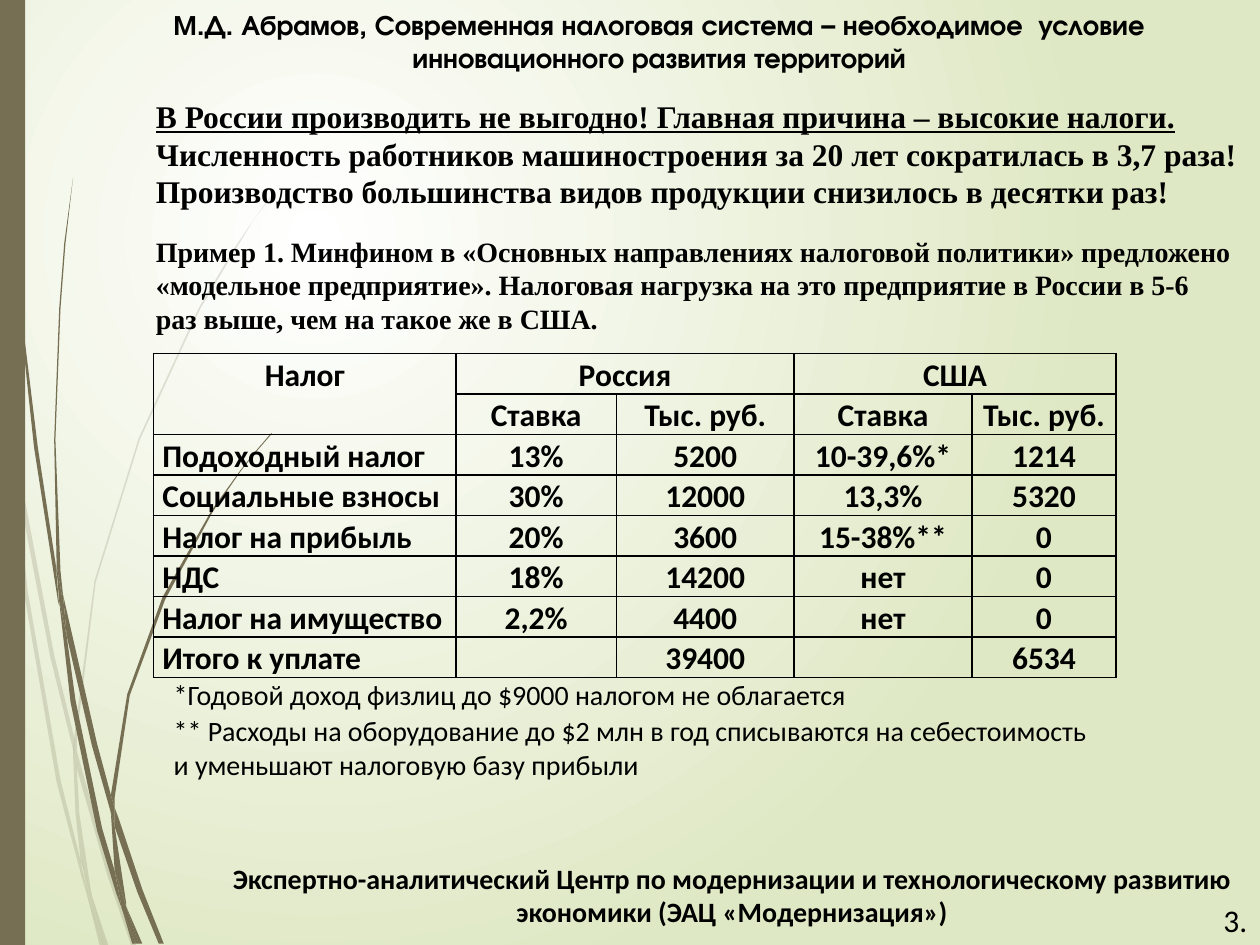
from lxml import etree
from pptx import Presentation
from pptx.dml.color import RGBColor
from pptx.enum.shapes import MSO_SHAPE
from pptx.enum.text import MSO_ANCHOR, PP_ALIGN
from pptx.oxml.ns import qn
from pptx.util import Pt

LEFT, CENTER = PP_ALIGN.LEFT, PP_ALIGN.CENTER
TOP, MIDDLE = MSO_ANCHOR.TOP, MSO_ANCHOR.MIDDLE
RECT = MSO_SHAPE.RECTANGLE

COLORS = {"white": "FFFFFF", "green": "DFE8C4", "stem": "766F54", "black": "000000"}
SERIF, SANS, HEAD = "Times New Roman", "Calibri", "TeX Gyre Adventor"
GRASS_UNIT = Pt(0.72)

# Outlines of the grass blades, in units of GRASS_UNIT
PALE_GRASS = [
    [(8, 350), (6, 322), (0, 282), (0, 299), (7, 344)],
    [(40, 522), (59, 599), (59, 586), (43, 520), (10, 345), (12, 376)],
    [(64, 607), (61, 596), (61, 610), (85, 694), (104, 750), (108, 750), (88, 692)],
    [(83, 750), (86, 750), (73, 711)],
    [(64, 683), (48, 619), (22, 469), (12, 376), (8, 350), (19, 470), (45, 621),
     (64, 693), (70, 714), (69, 707)],
    [(58, 599), (60, 646), (64, 683), (67, 692), (73, 711), (72, 706), (63, 646),
     (61, 610), (61, 608)],
    [(61, 584), (76, 462), (111, 349), (159, 245), (187, 198), (201, 175), (217, 154),
     (217, 153), (201, 175), (186, 197), (158, 244), (110, 348), (75, 461), (59, 584),
     (59, 586), (61, 596)],
    [(70, 714), (79, 750), (82, 750)],
    [(61, 608), (61, 610), (61, 596), (59, 586), (58, 599)],
    [(67, 692), (65, 683), (69, 707), (70, 714), (82, 750), (83, 750), (73, 711)],
]
DARK_GRASS = [
    [(5, 110), (14, 233), (27, 355), (46, 477), (47, 481), (45, 457), (45, 453),
     (30, 355), (15, 232), (6, 109), (4, 48), (3, 0), (2, 0), (3, 48)],
    [(73, 592), (88, 645), (88, 633), (88, 631), (77, 590), (50, 472), (53, 505)],
    [(94, 649), (91, 641), (91, 656), (109, 708), (126, 749), (130, 749), (113, 706)],
    [(91, 691), (81, 657), (60, 556), (53, 505), (47, 477), (56, 557), (77, 659),
     (92, 708), (97, 722), (96, 717)],
    [(50, 472), (48, 453), (44, 349), (48, 245), (52, 193), (58, 141), (51, 193),
     (47, 245), (43, 349), (45, 449), (49, 472)],
    [(110, 749), (113, 749), (100, 719)],
    [(47, 477), (53, 505), (50, 472), (49, 472), (45, 449), (45, 453)],
    [(91, 633), (103, 552), (131, 476), (169, 406), (191, 374), (203, 359), (216, 344),
     (215, 344), (203, 358), (191, 373), (168, 405), (129, 474), (101, 551), (88, 631),
     (91, 641)],
    [(97, 722), (105, 749), (108, 749)],
    [(88, 645), (91, 691), (96, 706), (100, 719), (100, 716), (91, 656), (90, 651)],
    [(88, 645), (90, 651), (91, 656), (91, 641), (88, 631), (88, 633)],
    [(96, 706), (91, 691), (96, 717), (97, 722), (108, 749), (110, 749), (100, 719)],
]

TAXES = [
    ["Налог", "Россия", "", "США", ""],
    ["", "Ставка", "Тыс. руб.", "Ставка", "Тыс. руб."],
    ["Подоходный налог", "13%", "5200", "10-39,6%*", "1214"],
    ["Социальные взносы", "30%", "12000", "13,3%", "5320"],
    ["Налог на прибыль", "20%", "3600", "15-38%**", "0"],
    ["НДС", "18%", "14200", "нет", "0"],
    ["Налог на имущество", "2,2%", "4400", "нет", "0"],
    ["Итого к уплате", "", "39400", "", "6534"],
]
COL_WIDTHS = [172.8, 91.6, 101.6, 101.6, 82.4]
ROW_HEIGHT = 23.14
MERGES = [((0, 0), (1, 0)), ((0, 1), (0, 2)), ((0, 3), (0, 4))]


def rgb(name):
    return RGBColor.from_string(COLORS[name])


def set_background(s):
    fill = s.background.fill
    fill.gradient()
    for stop, name in zip(fill.gradient_stops, ("white", "green")):
        stop.color.rgb = rgb(name)
    grad = s.background._cSld.find(".//" + qn("a:gradFill"))
    grad.remove(grad.find(qn("a:lin")))
    circle = etree.SubElement(grad, qn("a:path"), {"path": "circle"})
    etree.SubElement(circle, qn("a:fillToRect"),
                     dict(l="50000", t="50000", r="100000", b="100000"))


def paint_stem(sp, alpha=None):
    sp.shadow.inherit = False
    sp.fill.solid()
    sp.fill.fore_color.rgb = rgb("stem")
    sp.line.fill.background()
    if alpha:
        color = sp._element.spPr.find(qn("a:solidFill"))[0]
        etree.SubElement(color, qn("a:alpha"), val=str(alpha * 1000))


def add_blade(s, points, alpha=None):
    fb = s.shapes.build_freeform(*points[0], scale=GRASS_UNIT)
    fb.add_line_segments(points[1:], close=True)
    paint_stem(fb.convert_to_shape(), alpha)


def add_run(p, text, size, font, bold=False, underline=False):
    r = p.add_run()
    r.text = text
    r.font.size, r.font.name = Pt(size), font
    r.font.bold, r.font.underline = bold, underline
    r.font.color.rgb = rgb("black")


def add_text(s, box, texts, size, font, bold=False, align=LEFT, anchor=TOP, wrap=True):
    """Adds a text box with one paragraph per text and returns its paragraphs."""
    tf = s.shapes.add_textbox(*map(Pt, box)).text_frame
    tf.word_wrap, tf.vertical_anchor = wrap, anchor
    for i, text in enumerate(texts):
        p = tf.add_paragraph() if i else tf.paragraphs[0]
        p.alignment = align
        add_run(p, text, size, font, bold)
    return tf.paragraphs


def set_borders(cell):
    tcPr = cell._tc.get_or_add_tcPr()
    for side in ("a:lnL", "a:lnR", "a:lnT", "a:lnB"):
        ln = etree.SubElement(tcPr, qn(side), w=str(Pt(1)))
        fill = etree.SubElement(ln, qn("a:solidFill"))
        etree.SubElement(fill, qn("a:srgbClr"), val=COLORS["black"])


def add_tax_table(s, left, top):
    frame = s.shapes.add_table(len(TAXES), len(COL_WIDTHS), Pt(left), Pt(top),
                               Pt(sum(COL_WIDTHS)), Pt(ROW_HEIGHT * len(TAXES)))
    table = frame.table
    table.first_row = table.horz_banding = False
    for col, width in zip(table.columns, COL_WIDTHS):
        col.width = Pt(width)
    for i, texts in enumerate(TAXES):
        table.rows[i].height = Pt(ROW_HEIGHT)
        for j, text in enumerate(texts):
            cell = table.cell(i, j)
            cell.margin_left = cell.margin_right = Pt(5)
            cell.margin_top = cell.margin_bottom = Pt(0)
            set_borders(cell)
            cell.fill.background()
            if text:
                p = cell.text_frame.paragraphs[0]
                p.alignment = LEFT if j == 0 and i > 1 else CENTER
                p.line_spacing = 1.07
                add_run(p, text, 18, SANS, bold=True)
    for first, last in MERGES:
        table.cell(*first).merge(table.cell(*last))


def main():
    prs = Presentation()
    prs.slide_width, prs.slide_height = Pt(720), Pt(540)
    s = prs.slides.add_slide(prs.slide_layouts[6])

    # Background, grass and side bar
    set_background(s)
    for points in PALE_GRASS:
        add_blade(s, points, alpha=20)
    for points in DARK_GRASS:
        add_blade(s, points)
    paint_stem(s.shapes.add_shape(RECT, Pt(0), Pt(0), Pt(14.4), Pt(540)))

    # Example
    example = add_text(s, (82, 130.3, 630.7, 264.2), [
        "Пример 1. Минфином в «Основных направлениях налоговой политики» предложено "
        "«модельное предприятие». Налоговая нагрузка на это предприятие в России "
        "в 5-6 раз выше, чем на такое же в США."], 16, SERIF, bold=True)
    example[0].space_before = Pt(10)

    # Main statement
    statement = add_text(s, (82, 51.8, 647, 72.7), [
        "В России производить не выгодно! Главная причина – высокие налоги.",
        "Производство большинства видов продукции снизилось в десятки раз!"],
        18, SERIF, bold=True)
    statement[0].runs[0].font.underline = True
    statement[0].add_line_break()
    add_run(statement[0], "Численность работников машиностроения за 20 лет "
            "сократилась в 3,7 раза!", 18, SERIF, bold=True)

    # Page number, footer and header
    add_text(s, (692, 511.2, 28, 28.8), ["3."], 18, SANS, wrap=False)
    add_text(s, (110.9, 488.2, 614.9, 46), [
        "Экспертно-аналитический Центр по модернизации и технологическому развитию "
        "экономики (ЭАЦ «Модернизация»)"], 16, SANS, True, CENTER, MIDDLE)
    add_text(s, (48.2, 0.7, 657.4, 52.6), [
        "М.Д. Абрамов, Современная налоговая система – необходимое  условие "
        "инновационного развития территорий"], 16, HEAD, True, CENTER)

    # Tax table and its notes
    add_tax_table(s, 87.8, 202)
    notes = add_text(s, (92.2, 382.3, 544.3, 68.4), [
        "*Годовой доход физлиц до $9000 налогом не облагается",
        "** Расходы на оборудование до $2 млн в год списываются на себестоимость",
        "и уменьшают налоговую базу прибыли"], 16, SANS)
    for p in notes[:2]:
        p.line_spacing = 1.07

    prs.save("out.pptx")


if __name__ == "__main__":
    main()
